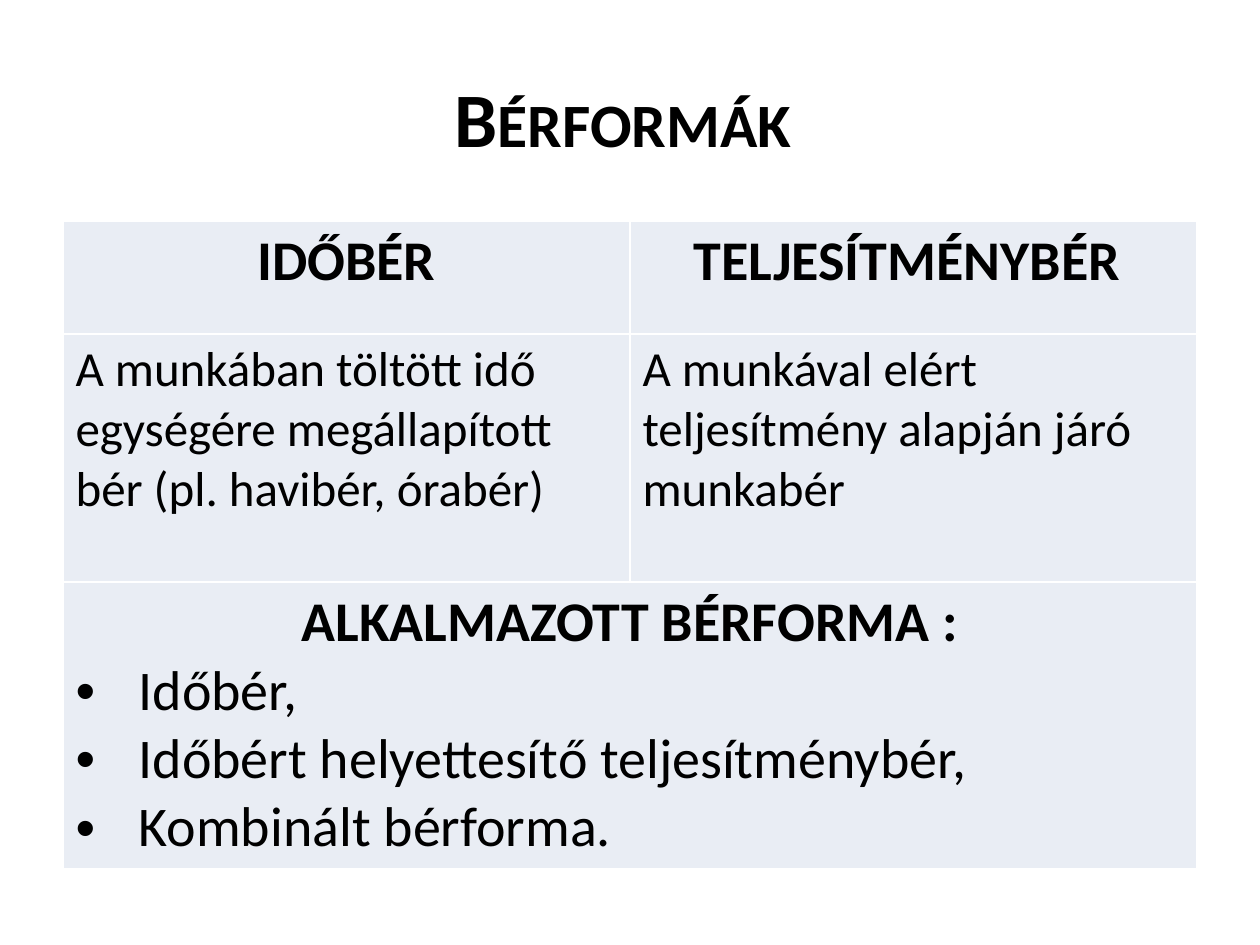
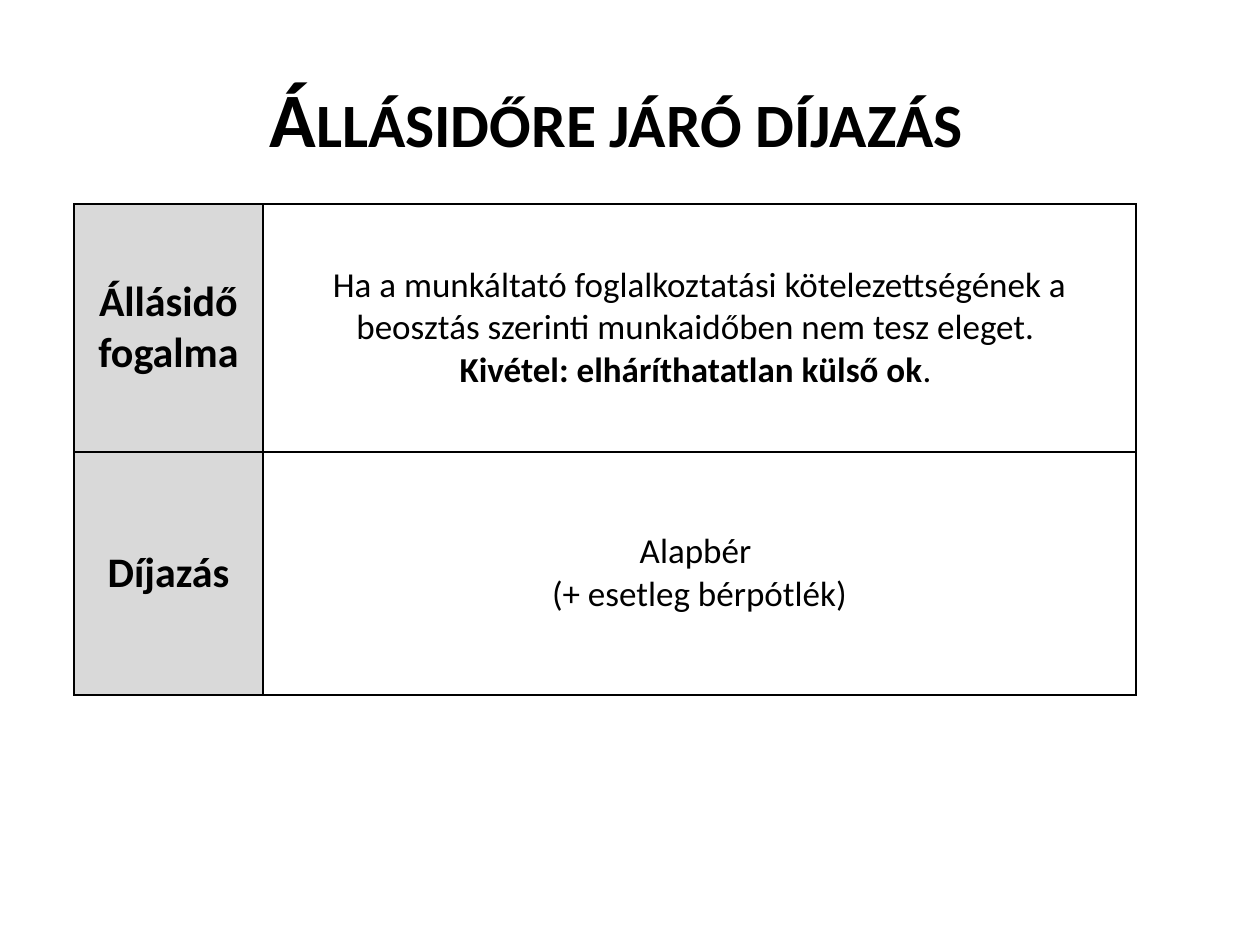
from lxml.etree import SubElement
from pptx import Presentation
from pptx.dml.color import RGBColor
from pptx.enum.text import MSO_ANCHOR, MSO_AUTO_SIZE, PP_ALIGN
from pptx.oxml.ns import qn
from pptx.util import Emu, Pt

PIXELS_PER_INCH = 126
SLIDE_SIZE = (1260, 945)
TITLE_BOX = (63, 38, 1134, 158)
FONT = "Calibri"
BLACK, WHITE = "000000", "FFFFFF"
PALE_BLUE, GREY = "E9EDF4", "D9D9D9"
BULLET_INDENT = 63

HEADING = dict(size=32, bold=True)
BODY = dict(size=28, align=PP_ALIGN.LEFT)
BULLET = dict(size=32, align=PP_ALIGN.LEFT, bullet="•")
LABEL = dict(size=24, bold=True)
DETAIL = dict(size=20)

SLIDES = [
    dict(
        title="Bérformák ",
        position=(63, 221),
        columns=[567, 567],
        rows=[113, 248, 281],
        fills=[PALE_BLUE, PALE_BLUE],
        border=WHITE,
        anchor=MSO_ANCHOR.TOP,
        cells=[
            [[("IDŐBÉR", HEADING)], [("TELJESÍTMÉNYBÉR ", HEADING)]],
            [
                [("A munkában töltött idő egységére megállapított bér (pl. havibér, órabér)", BODY)],
                [("A munkával elért teljesítmény alapján járó munkabér", BODY)],
            ],
            [[
                ("ALKALMAZOTT BÉRFORMA :", HEADING),
                ("Időbér,", BULLET),
                ("Időbért helyettesítő teljesítménybér,", BULLET),
                ("Kombinált bérforma.", BULLET),
            ]],
        ],
    ),
    dict(
        title="Állásidőre járó díjazás  ",
        position=(74, 204),
        columns=[189, 873],
        rows=[248, 243],
        fills=[GREY, None],
        border=BLACK,
        anchor=MSO_ANCHOR.MIDDLE,
        cells=[
            [
                [("Állásidő fogalma", LABEL)],
                [
                    ("Ha a munkáltató foglalkoztatási kötelezettségének a beosztás szerinti "
                     "munkaidőben nem tesz eleget. ", DETAIL),
                    ("Kivétel: elháríthatatlan külső ok", dict(size=20, bold=True)),
                    (". ", dict(size=20, joined=True)),
                ],
            ],
            [
                [("Díjazás", LABEL)],
                [("Alapbér ", DETAIL), ("(+ esetleg bérpótlék)", DETAIL)],
            ],
        ],
    ),
]


def px(length):
    return Emu(round(length * 914400 / PIXELS_PER_INCH))


def color(value):
    return RGBColor.from_string(value)


def add_text(frame, text, size, bold=False, align=PP_ALIGN.CENTER,
             bullet=None, small_caps=False, joined=False):
    paragraph = frame.paragraphs[-1]
    if paragraph.runs and not joined:
        paragraph = frame.add_paragraph()
    paragraph.alignment = align
    if bullet:
        properties = paragraph._p.get_or_add_pPr()
        properties.set("marL", str(px(BULLET_INDENT)))
        properties.set("indent", str(-px(BULLET_INDENT)))
        SubElement(properties, qn("a:buFont"), typeface="Arial")
        SubElement(properties, qn("a:buChar"), char=bullet)
    run = paragraph.add_run()
    run.text = text
    run.font.name = FONT
    run.font.size = Pt(size)
    run.font.bold = bold
    run.font.color.rgb = color(BLACK)
    if small_caps:
        run.font._element.set("cap", "small")


def format_cell(cell, fill, border, anchor):
    cell.vertical_anchor = anchor
    properties = cell._tc.get_or_add_tcPr()
    for side in ("lnL", "lnR", "lnT", "lnB"):
        line = SubElement(properties, qn(f"a:{side}"), w=str(Pt(1)))
        solid = SubElement(line, qn("a:solidFill"))
        SubElement(solid, qn("a:srgbClr"), val=border)
    if fill:
        cell.fill.solid()
        cell.fill.fore_color.rgb = color(fill)
    else:
        cell.fill.background()


def add_title(slide, text):
    title = slide.shapes.title
    title.left, title.top, title.width, title.height = map(px, TITLE_BOX)
    frame = title.text_frame
    frame.word_wrap = True
    frame.auto_size = MSO_AUTO_SIZE.NONE
    frame.vertical_anchor = MSO_ANCHOR.MIDDLE
    add_text(frame, text, size=44, bold=True, small_caps=True)


def add_content_table(slide, content):
    columns, rows = content["columns"], content["rows"]
    box = (*content["position"], sum(columns), sum(rows))
    table = slide.shapes.add_table(len(rows), len(columns), *map(px, box)).table
    table.first_row = table.horz_banding = False
    for column, width in zip(table.columns, columns):
        column.width = px(width)
    for row_index, (height, row_cells) in enumerate(zip(rows, content["cells"])):
        table.rows[row_index].height = px(height)
        for column_index, fill in enumerate(content["fills"]):
            format_cell(table.cell(row_index, column_index), fill,
                        content["border"], content["anchor"])
        if len(row_cells) < len(columns):
            table.cell(row_index, 0).merge(table.cell(row_index, len(columns) - 1))
        for column_index, paragraphs in enumerate(row_cells):
            frame = table.cell(row_index, column_index).text_frame
            for text, text_format in paragraphs:
                add_text(frame, text, **text_format)


def main():
    presentation = Presentation()
    presentation.slide_width, presentation.slide_height = map(px, SLIDE_SIZE)
    title_only = presentation.slide_layouts.get_by_name("Title Only")
    for content in SLIDES:
        slide = presentation.slides.add_slide(title_only)
        add_title(slide, content["title"])
        add_content_table(slide, content)
    presentation.save("out.pptx")


if __name__ == "__main__":
    main()
